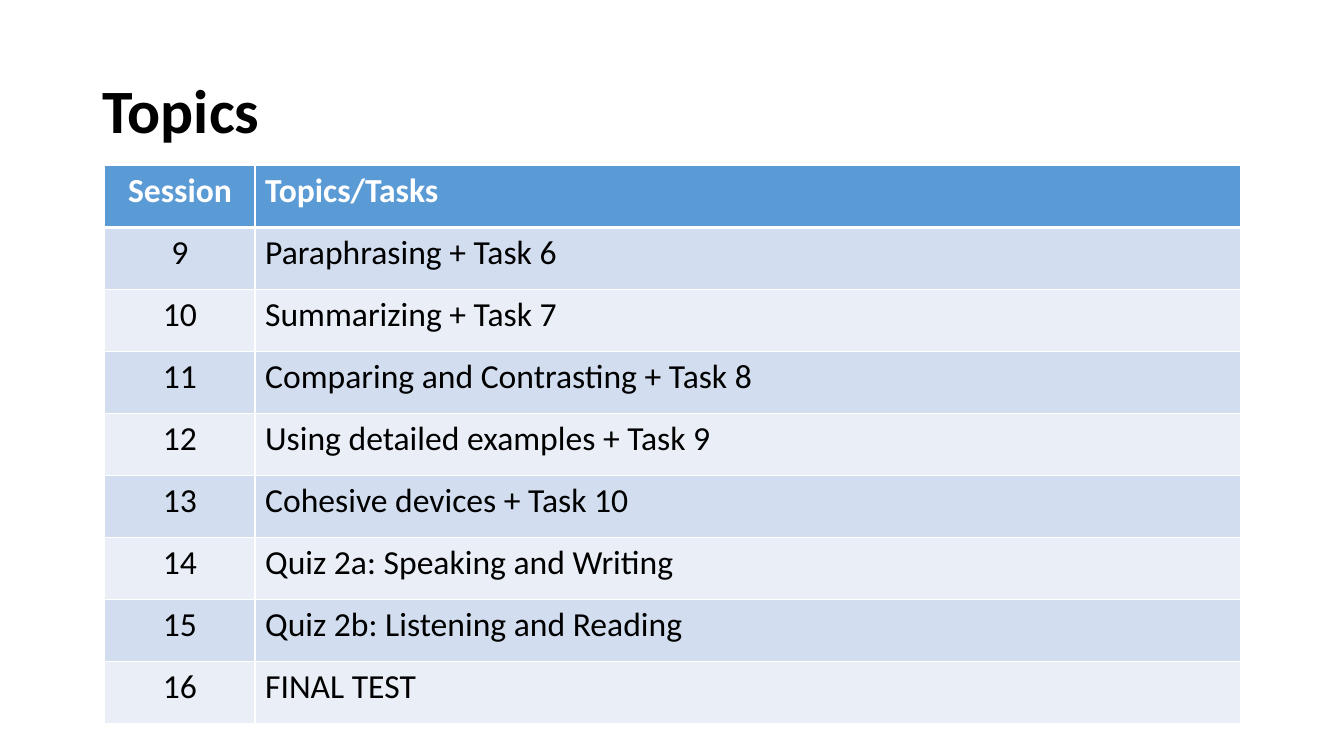
from dataclasses import dataclass

from lxml import etree
from pptx import Presentation
from pptx import util as u
from pptx.dml.color import RGBColor
from pptx.enum import text
from pptx.oxml.ns import qn


@dataclass(frozen=True)
class Theme:
    font: str = "Calibri"
    title_size: int = 44
    table_size: int = 24
    ink: str = "000000"
    white: str = "FFFFFF"
    header: str = "5B9BD5"
    bands: tuple = ("D2DEEF", "EAEFF7")
    thin_rule: int = 1
    header_rule: int = 3


FIRST_SESSION = 9
TOPICS = [
    "Paraphrasing + Task 6",
    "Summarizing + Task 7",
    "Comparing and Contrasting + Task 8",
    "Using detailed examples + Task 9",
    "Cohesive devices + Task 10",
    "Quiz 2a: Speaking and Writing",
    "Quiz 2b: Listening and Reading",
    "FINAL TEST",
]


def write(frame, words, *, font, size, color, bold=False,
          align=text.PP_ALIGN.LEFT, line_spacing=None):
    paragraph = frame.paragraphs[0]
    paragraph.alignment = align
    paragraph.line_spacing = line_spacing
    run = paragraph.add_run()
    run.text = words
    run.font.name = font
    run.font.size = u.Pt(size)
    run.font.bold = bold
    run.font.color.rgb = RGBColor.from_string(color)


def add_border(cell, side, width, color):
    properties = cell._tc.get_or_add_tcPr()
    line = etree.SubElement(properties, qn(f"a:ln{side}"), w=str(u.Pt(width)))
    fill = etree.SubElement(line, qn("a:solidFill"))
    etree.SubElement(fill, qn("a:srgbClr"), val=color)


class SlideBuilder:
    def __init__(self, slide, theme):
        self.slide = slide
        self.theme = theme

    def title(self, words, left, top, width, height):
        box = self.slide.shapes.add_textbox(
            *map(u.Inches, (left, top, width, height)))
        frame = box.text_frame
        frame.word_wrap = True
        frame.vertical_anchor = text.MSO_ANCHOR.MIDDLE
        write(frame, words, font=self.theme.font, size=self.theme.title_size,
              color=self.theme.ink, bold=True, line_spacing=0.9)

    def table(self, rows, left, top, column_widths, height):
        shape = self.slide.shapes.add_table(
            len(rows), len(column_widths),
            *map(u.Inches, (left, top, sum(column_widths), height)))
        table = shape.table
        for column, width in zip(table.columns, column_widths):
            column.width = u.Inches(width)
        for row_index, row in enumerate(rows):
            for column_index, words in enumerate(row):
                self.cell(table.cell(row_index, column_index), words,
                          row_index, column_index)

    def cell(self, cell, words, row_index, column_index):
        theme = self.theme
        is_header = row_index == 0

        # The heavier rule is shared by the header and the first session
        rules = {"L": theme.thin_rule, "R": theme.thin_rule,
                 "T": theme.header_rule if row_index == 1 else theme.thin_rule,
                 "B": theme.header_rule if is_header else theme.thin_rule}
        for side, width in rules.items():
            add_border(cell, side, width, theme.white)

        fill = theme.header if is_header else theme.bands[(row_index - 1) % 2]
        cell.fill.solid()
        cell.fill.fore_color.rgb = RGBColor.from_string(fill)
        align = text.PP_ALIGN.LEFT if column_index else text.PP_ALIGN.CENTER
        write(cell.text_frame, words, font=theme.font, size=theme.table_size,
              color=theme.white if is_header else theme.ink,
              bold=is_header, align=align)


def main():
    presentation = Presentation()
    presentation.slide_width = u.Inches(13.33)
    presentation.slide_height = u.Inches(7.5)
    slide = presentation.slides.add_slide(presentation.slide_layouts[6])
    builder = SlideBuilder(slide, Theme())

    # Heading
    builder.title("Topics", 0.92, 0.4, 11.5, 1.45)

    # Session schedule
    sessions = [(str(number), topic)
                for number, topic in enumerate(TOPICS, FIRST_SESSION)]
    builder.table([("Session", "Topics/Tasks"), *sessions],
                  1.04, 1.64, (1.49, 9.77), 5.54)

    presentation.save("out.pptx")


if __name__ == "__main__":
    main()
